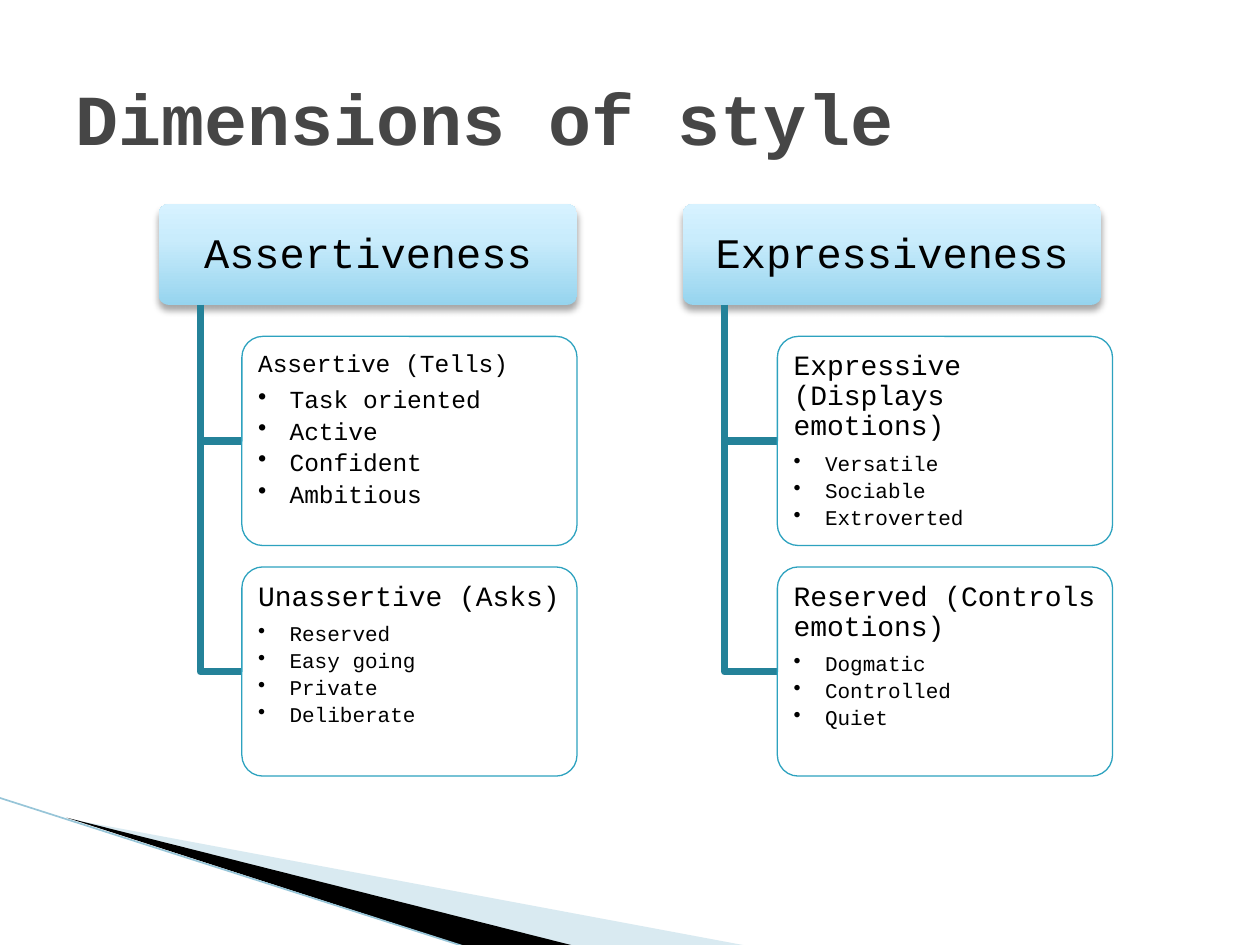
from lxml import etree
from pptx import Presentation
from pptx.dml.color import RGBColor
from pptx.enum.shapes import MSO_CONNECTOR, MSO_SHAPE
from pptx.enum.text import MSO_ANCHOR, PP_ALIGN
from pptx.oxml import parse_xml
from pptx.oxml.ns import nsdecls, qn
from pptx.util import Inches, Pt

FONT = "Courier New"
BLACK = RGBColor(0x00, 0x00, 0x00)
WHITE = RGBColor(0xFF, 0xFF, 0xFF)
TITLE_GRAY = RGBColor(0x46, 0x46, 0x46)
BRANCH_TEAL = RGBColor(0x24, 0x82, 0x99)
BORDER_TEAL = RGBColor(0x2D, 0xA2, 0xBF)
PALE_BLUE = RGBColor(0xA0, 0xCB, 0xDC)
EDGE_BLUE = RGBColor(0x97, 0xC5, 0xD8)
HEADER_STOPS = [
    (0, RGBColor(0x96, 0xD4, 0xEE)),
    (65, RGBColor(0xC9, 0xEC, 0xFC)),
    (100, RGBColor(0xD7, 0xF2, 0xFF)),
]

HEADER_WIDTH, HEADER_HEIGHT = 3.32, 0.8
CARD_WIDTH, CARD_HEIGHT = 2.66, 1.66
CARD_TOP, CARD_STEP = 1.05, 1.83
TRUNK_OFFSET = 0.33

COLUMNS = [
    (1.26, 0.66, "Assertiveness", [
        ("Assertive (Tells)", 14, 14,
         ["Task oriented", "Active", "Confident", "Ambitious"]),
        ("Unassertive (Asks)", 16, 12,
         ["Reserved", "Easy going", "Private", "Deliberate"]),
    ]),
    (5.42, 0.75, "Expressiveness", [
        ("Expressive (Displays emotions)", 16, 12,
         ["Versatile", "Sociable", "Extroverted"]),
        ("Reserved (Controls emotions)", 16, 12,
         ["Dogmatic", "Controlled", "Quiet"]),
    ]),
]


def set_solid(shape, color, opacity=100):
    shape.fill.solid()
    shape.fill.fore_color.rgb = color
    if opacity < 100:
        choice = shape.fill._xPr.find(qn("a:solidFill"))[0]
        etree.SubElement(choice, qn("a:alpha")).set("val", str(opacity * 1000))


def set_header_effects(shape):
    stops = "".join(
        f'<a:gs pos="{position * 1000}"><a:srgbClr val="{color}"/></a:gs>'
        for position, color in HEADER_STOPS)
    gradient = parse_xml(
        f'<a:gradFill {nsdecls("a")} rotWithShape="1"><a:gsLst>{stops}</a:gsLst>'
        '<a:lin ang="16200000" scaled="0"/></a:gradFill>')
    shadow = parse_xml(
        f'<a:effectLst {nsdecls("a")}><a:outerShdw blurRad="{Pt(4)}" '
        f'dist="{Pt(3)}" dir="5400000" rotWithShape="0">'
        '<a:srgbClr val="000000"><a:alpha val="35000"/></a:srgbClr>'
        '</a:outerShdw></a:effectLst>')
    shape.line.fill.background()
    properties = shape._element.spPr
    properties.find(qn("a:prstGeom")).addnext(gradient)
    properties.find(qn("a:ln")).addnext(shadow)


def set_insets(frame, side, end):
    frame.word_wrap = True
    frame.margin_left = frame.margin_right = Inches(side)
    frame.margin_top = frame.margin_bottom = Inches(end)


def write_para(para, text, size, after, align=PP_ALIGN.LEFT, bullet=False):
    para.text = text
    para.alignment = align
    para.line_spacing = 0.9
    para.space_after = Pt(round(size * after, 1))
    if bullet:
        properties = para._p.get_or_add_pPr()
        properties.set("marL", str(Inches(0.25)))
        properties.set("indent", str(-Inches(0.25)))
        etree.SubElement(properties, qn("a:buChar")).set("char", "•")
    font = para.runs[0].font
    font.name = FONT
    font.size = Pt(size)
    font.color.rgb = BLACK


def add_rounded(page, left, top, width, height):
    shape = page.shapes.add_shape(
        MSO_SHAPE.ROUNDED_RECTANGLE,
        Inches(left), Inches(top), Inches(width), Inches(height))
    shape.adjustments[0] = 0.1
    return shape


def add_outline(page, points, close):
    start, *rest = [(Inches(x), Inches(y)) for x, y in points]
    builder = page.shapes.build_freeform(*start, scale=1.0)
    builder.add_line_segments(rest, close=close)
    shape = builder.convert_to_shape()
    shape.shadow.inherit = False
    return shape


def add_swoosh(page):
    for points, color, opacity in [
        ([(0.55, 6.5), (5.95, 7.51), (4.56, 7.51)], PALE_BLUE, 40),
        ([(0.53, 6.49), (4.57, 7.51), (3.72, 7.52)], BLACK, 100),
    ]:
        wedge = add_outline(page, points, close=True)
        set_solid(wedge, color, opacity)
        wedge.line.fill.background()
    edge = page.shapes.add_connector(
        MSO_CONNECTOR.STRAIGHT,
        Inches(-0.01), Inches(6.33), Inches(3.71), Inches(7.52))
    edge.line.color.rgb = EDGE_BLUE
    edge.line.width = Pt(0.95)
    etree.SubElement(edge._element.spPr, qn("a:effectLst"))


def add_header(page, left, top, text):
    header = add_rounded(page, left, top, HEADER_WIDTH, HEADER_HEIGHT)
    set_header_effects(header)
    frame = header.text_frame
    set_insets(frame, 0.07, 0.05)
    frame.vertical_anchor = MSO_ANCHOR.MIDDLE
    write_para(frame.paragraphs[0], text, 24, 0.35, PP_ALIGN.CENTER)


def add_branch(page, trunk, top, card_left, middle):
    branch = add_outline(
        page, [(trunk, top), (trunk, middle), (card_left, middle)], close=False)
    branch.fill.background()
    branch.line.color.rgb = BRANCH_TEAL
    branch.line.width = Pt(4.33)


def add_card(page, left, top, heading, heading_size, item_size, items):
    card = add_rounded(page, left, top, CARD_WIDTH, CARD_HEIGHT)
    card.shadow.inherit = False
    set_solid(card, WHITE, 90)
    card.line.color.rgb = BORDER_TEAL
    card.line.width = Pt(0.75)
    frame = card.text_frame
    set_insets(frame, 0.08, 0.07)
    frame.vertical_anchor = MSO_ANCHOR.TOP
    write_para(frame.paragraphs[0], heading, heading_size, 0.4)
    for item in items:
        write_para(frame.add_paragraph(), item, item_size, 0.2, bullet=True)


def add_column(page, left, top, card_offset, title, cards):
    add_header(page, left, top, title)
    card_left = left + card_offset
    for index, card in enumerate(cards):
        card_top = top + CARD_TOP + index * CARD_STEP
        add_branch(page, left + TRUNK_OFFSET, top + HEADER_HEIGHT,
                   card_left, card_top + CARD_HEIGHT / 2)
        add_card(page, card_left, card_top, *card)


def add_title(page, left, top, width, height, text):
    box = page.shapes.add_textbox(
        Inches(left), Inches(top), Inches(width), Inches(height))
    frame = box.text_frame
    frame.word_wrap = True
    frame.vertical_anchor = MSO_ANCHOR.MIDDLE
    frame.text = text
    font = frame.paragraphs[0].runs[0].font
    font.name = FONT
    font.size = Pt(41)
    font.bold = True
    font.color.rgb = TITLE_GRAY


def main():
    deck = Presentation()
    deck.slide_width, deck.slide_height = Inches(10), Inches(7.5)
    page = deck.slides.add_slide(deck.slide_layouts[6])
    add_swoosh(page)
    for left, card_offset, title, cards in COLUMNS:
        add_column(page, left, 1.62, card_offset, title, cards)
    add_title(page, 0.5, 0.3, 9, 1.25, "Dimensions of style")
    deck.save("out.pptx")


if __name__ == "__main__":
    main()
